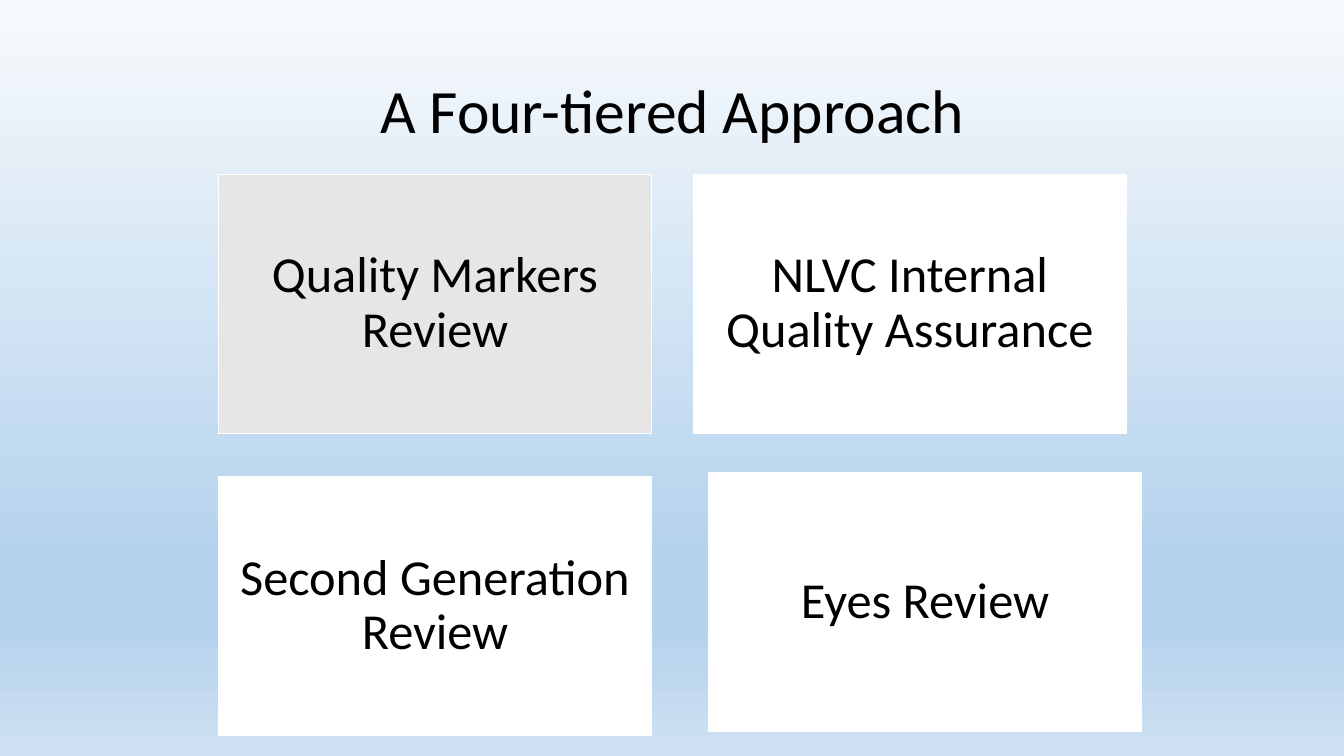
from copy import deepcopy
from pptx import Presentation
from pptx.dml.color import RGBColor
from pptx.enum.shapes import MSO_SHAPE as Shape
from pptx.enum.text import MSO_ANCHOR as Anchor, PP_ALIGN as Align
from pptx.oxml.ns import qn
from pptx.util import Inches, Pt


def color(code):
    return RGBColor.from_string(code)


def write(frame, text, size):
    frame.text = text
    frame.word_wrap = True
    frame.vertical_anchor = Anchor.MIDDLE
    para = frame.paragraphs[0]
    para.alignment = Align.CENTER
    para.line_spacing = 0.9
    font = para.runs[0].font
    font.name = "Calibri"
    font.size = Pt(size)
    font.color.rgb = color("000000")


deck = Presentation()
deck.slide_width = Inches(13.33)
deck.slide_height = Inches(7.5)
slide = deck.slides.add_slide(deck.slide_layouts[5])

fill = slide.background.fill
fill.gradient()
fill.gradient_angle = 270
stops = slide.element.find(".//" + qn("a:gsLst"))
for extra in range(2):
    stops.append(deepcopy(stops[0]))
shades = [(0, "F7FAFD"), (0.74, "B5D2EC"), (0.83, "B5D2EC"), (1, "CEE1F2")]
for stop, (place, shade) in zip(fill.gradient_stops, shades):
    stop.position = place
    stop.color.rgb = color(shade)

title = slide.shapes.title
title.left, title.top = Inches(0.92), Inches(0.4)
title.width, title.height = Inches(11.5), Inches(1.45)
write(title.text_frame, "A Four-tiered Approach", 44)

tiers = [
    ("Quality Markers Review", 2.17, 1.73, "E7E6E6"),
    ("NLVC Internal Quality Assurance", 6.88, 1.73, "FFFFFF"),
    ("Second Generation Review", 2.17, 4.73, "FFFFFF"),
    ("Eyes Review", 7.03, 4.69, "FFFFFF"),
]
for text, left, top, shade in tiers:
    box = slide.shapes.add_shape(
        Shape.RECTANGLE, Inches(left), Inches(top), Inches(4.29), Inches(2.57))
    box.shadow.inherit = False
    box.fill.solid()
    box.fill.fore_color.rgb = color(shade)
    box.line.color.rgb = color("FFFFFF")
    box.line.width = Pt(1)
    frame = box.text_frame
    frame.margin_left = frame.margin_right = Inches(0.15)
    frame.margin_top = frame.margin_bottom = Inches(0.15)
    write(frame, text, 36)

deck.save("out.pptx")
